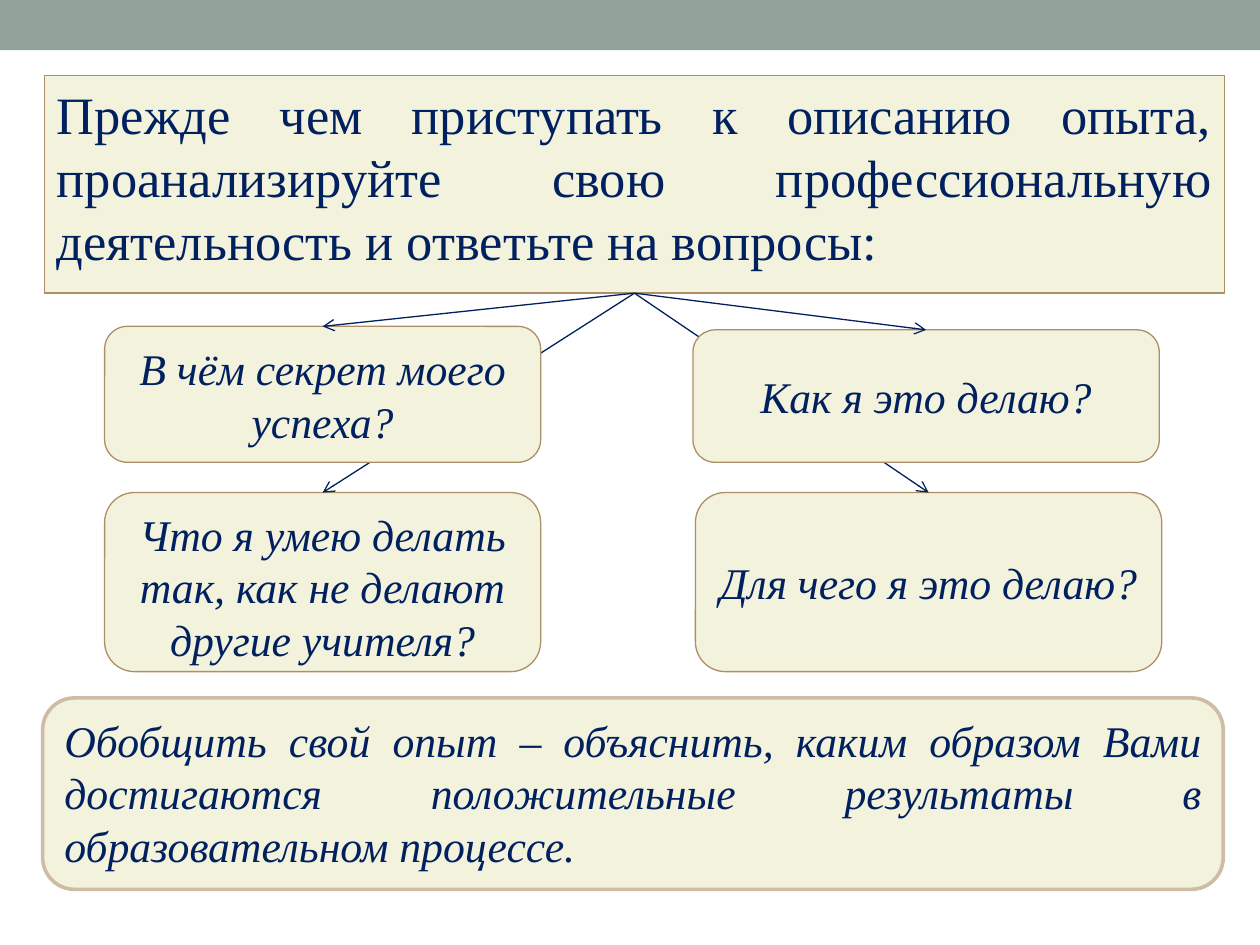
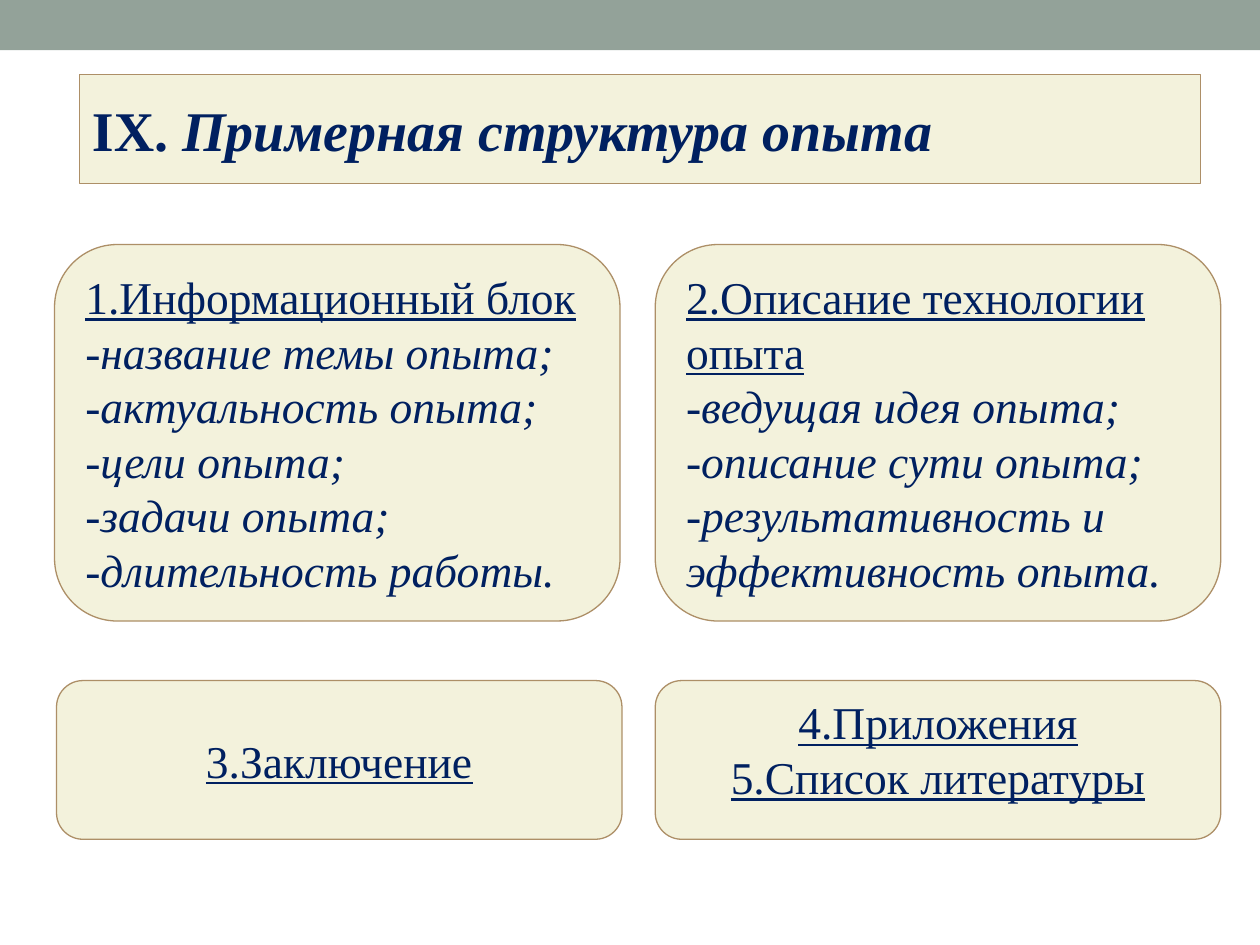
from typing import NamedTuple

from lxml.etree import SubElement
from pptx import Presentation
from pptx.dml.color import RGBColor
from pptx.enum.shapes import MSO_CONNECTOR, MSO_SHAPE
from pptx.enum.text import MSO_ANCHOR as Anchor, MSO_AUTO_SIZE, PP_ALIGN as Align
from pptx.oxml.ns import qn
from pptx.util import Cm, Pt

COLORS = {"band": "93A299", "card": "F3F2DC", "border": "AD8F67",
          "soft_border": "CEBCA4", "ink": "002060"}
FONT = "Times New Roman"
TITLE_ONLY = 5
TOP, BOTTOM = 0, 2


class Box(NamedTuple):
    """Left, top, width and height in centimetres."""
    left: float
    top: float
    width: float
    height: float

    def inner(self, left, top, width, height):
        return Box(self.left + left, self.top + top, width, height)

    def lengths(self):
        return [Cm(value) for value in self]


def color(name):
    return RGBColor.from_string(COLORS[name])


def add_band(slide, box):
    band = slide.shapes.add_shape(MSO_SHAPE.RECTANGLE, *box.lengths())
    band.shadow.inherit = False
    band.fill.solid()
    band.fill.fore_color.rgb = color("band")
    band.line.fill.background()


def style_card(card, anchor, border="border", border_width=0.75):
    card.fill.solid()
    card.fill.fore_color.rgb = color("card")
    card.line.color.rgb = color(border)
    card.line.width = Pt(border_width)
    frame = card.text_frame
    frame.word_wrap = True
    frame.auto_size = MSO_AUTO_SIZE.NONE
    frame.vertical_anchor = anchor


def style_paragraph(paragraph, size, align, bold=False, italic=False, underline=False):
    paragraph.alignment = align
    font = paragraph.font
    font.name, font.size, font.color.rgb = FONT, Pt(size), color("ink")
    font.bold, font.italic, font.underline = bold, italic, underline


def add_card(slide, box, size, align, headings=(), items=(), anchor=Anchor.MIDDLE, **border):
    """Rounded card with underlined headings followed by italic items."""
    card = slide.shapes.add_shape(MSO_SHAPE.ROUNDED_RECTANGLE, *box.lengths())
    card.shadow.inherit = False
    style_card(card, anchor, **border)
    frame = card.text_frame
    for index, text in enumerate([*headings, *items]):
        paragraph = frame.add_paragraph() if index else frame.paragraphs[0]
        paragraph.text = text
        is_heading = index < len(headings)
        style_paragraph(paragraph, size, align, italic=not is_heading, underline=is_heading)
    return card


def add_title(slide, box, runs, size, align, anchor, bold=False):
    """Turn the title placeholder into a rounded card; runs are (text, italic)."""
    title = slide.shapes.title
    title.left, title.top, title.width, title.height = box.lengths()
    geometry = SubElement(title.element.spPr, qn("a:prstGeom"), prst="roundRect")
    SubElement(geometry, qn("a:avLst"))
    style_card(title, anchor)
    paragraph = title.text_frame.paragraphs[0]
    for text, italic in runs:
        run = paragraph.add_run()
        run.text = text
        run.font.italic = italic
    style_paragraph(paragraph, size, align, bold=bold)
    return title


def add_arrow(slide, source, target):
    arrow = slide.shapes.add_connector(MSO_CONNECTOR.STRAIGHT, 0, 0, 0, 0)
    arrow.begin_connect(source, BOTTOM)
    arrow.end_connect(target, TOP)
    arrow.line.color.rgb = color("ink")
    arrow.line.width = Pt(0.75)
    SubElement(arrow.line._get_or_add_ln(), qn("a:tailEnd"), type="arrow")
    SubElement(arrow.element.spPr, qn("a:effectLst"))


def add_questions(slide, box, source):
    """Lower row first, so that its arrows pass behind the upper row."""
    lower = [
        (box.inner(0, 3.35, 8.79, 3.61), "Что я умею делать так, как не делают другие учителя?",
         Anchor.TOP),
        (box.inner(11.91, 3.35, 9.4, 3.61), "Для чего я это делаю?", Anchor.MIDDLE),
    ]
    upper = [
        (box.inner(0, 0, 8.79, 2.74), "В чём секрет моего успеха?", Anchor.MIDDLE),
        (box.inner(11.86, 0.07, 9.4, 2.67), "Как я это делаю?", Anchor.MIDDLE),
    ]
    for row in (lower, upper):
        questions = [add_card(slide, place, 25, Align.CENTER, items=[text], anchor=anchor)
                     for place, text, anchor in row]
        for question in questions:
            add_arrow(slide, source, question)


def add_structure(slide, box):
    """Two equal columns of blocks, a tall row above a short one."""
    width, gap = 11.4, 0.71
    second = width + gap
    add_card(slide, box.inner(0, 0, width, 7.59), 26, Align.LEFT,
             ["1.Информационный блок"],
             ["-название темы опыта;", "-актуальность опыта;", "-цели опыта;",
              "-задачи опыта;", "-длительность работы."])
    add_card(slide, box.inner(second, 0, width, 7.59), 26, Align.LEFT,
             ["2.Описание технологии опыта"],
             ["-ведущая идея опыта;", "-описание сути опыта;",
              "-результативность и эффективность опыта."])
    add_card(slide, box.inner(0.04, 8.79, width, 3.2), 26, Align.CENTER, ["3.Заключение"])
    add_card(slide, box.inner(second, 8.79, width, 3.2), 26, Align.CENTER,
             ["4.Приложения", "5.Список литературы"], anchor=Anchor.TOP)


def add_base_slide(prs):
    slide = prs.slides.add_slide(prs.slide_layouts[TITLE_ONLY])
    add_band(slide, Box(0, 0, 25.4, 1.01))
    return slide


def build_questions_slide(prs):
    slide = add_base_slide(prs)
    opening = add_title(
        slide, Box(0.89, 1.52, 23.8, 4.39),
        [("Прежде чем приступать к описанию опыта, проанализируйте свою "
          "профессиональную деятельность и ответьте на вопросы:", False)],
        30, Align.JUSTIFY, Anchor.TOP)
    add_questions(slide, Box(2.11, 6.58, 21.31, 6.96), opening)
    add_card(slide, Box(0.86, 14.07, 23.8, 3.86), 25, Align.JUSTIFY,
             items=["Обобщить свой опыт – объяснить, каким образом Вами достигаются "
                    "положительные результаты в образовательном процессе."],
             anchor=Anchor.TOP, border="soft_border", border_width=2.08)


def build_structure_slide(prs):
    slide = add_base_slide(prs)
    add_title(slide, Box(1.6, 1.5, 22.6, 2.2),
              [("IX. ", False), ("Примерная структура опыта", True)],
              32, Align.LEFT, Anchor.MIDDLE, bold=True)
    add_structure(slide, Box(1.1, 4.93, 23.51, 11.99))


def main():
    prs = Presentation()
    prs.slide_width, prs.slide_height = Cm(25.4), Cm(19.05)
    build_questions_slide(prs)
    build_structure_slide(prs)
    prs.save("out.pptx")


if __name__ == "__main__":
    main()
